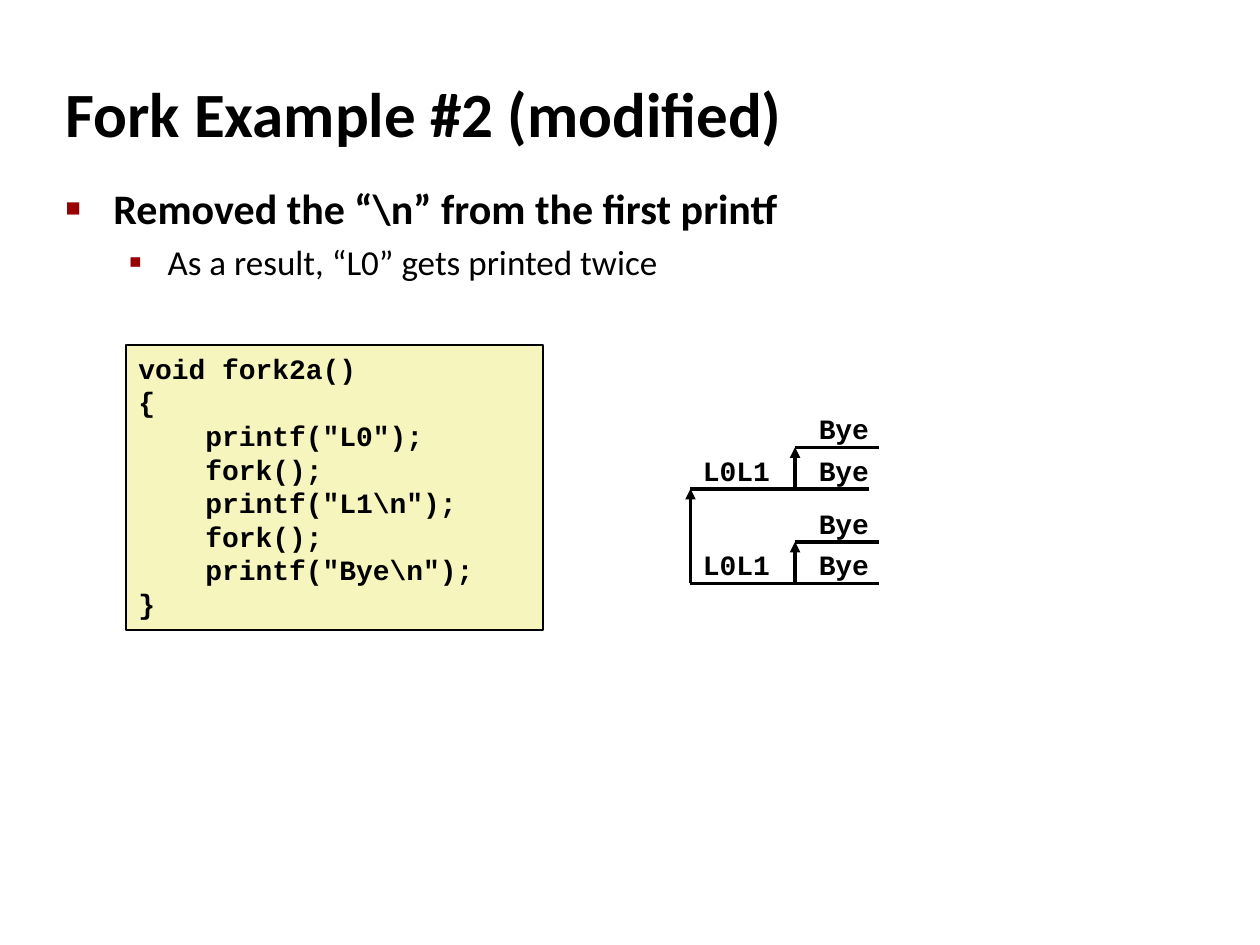
from pptx import Presentation
from pptx.dml.color import RGBColor as Rgb
from pptx.enum.shapes import MSO_CONNECTOR as Conn, MSO_SHAPE as Kind
from pptx.enum.text import MSO_ANCHOR as Anchor, MSO_AUTO_SIZE as Fit, PP_ALIGN as Align
from pptx.oxml import parse_xml
from pptx.oxml.ns import nsdecls
from pptx.util import Inches, Pt


def tint(code):
    return Rgb.from_string(code)


def node(tag, attrs="", inner=""):
    return parse_xml(f'<a:{tag} {nsdecls("a")} {attrs}>{inner}</a:{tag}>')


class Deck:
    """Style and current slide; lengths are in cells of a 100 x 75 grid."""
    ink, mark, cream = "000000", "990000", "F6F5BD"
    sans, mono = "Calibri", "Courier New"

    def __init__(self):
        self.prs = Presentation()
        self.prs.slide_width, self.prs.slide_height = Inches(10), Inches(7.5)
        self.cell = self.prs.slide_width / 100
        self.slide = self.prs.slides.add_slide(self.prs.slide_layouts[1])

    def grid(self, *cells):
        return [round(c * self.cell) for c in cells]

    def place(self, shape, *box):
        shape.left, shape.top, shape.width, shape.height = self.grid(*box)

    def run(self, para, text, size, font, bold=True):
        para.alignment = Align.LEFT
        run = para.add_run()
        run.text = text
        run.font.size, run.font.name, run.font.bold = Pt(size), font, bold
        run.font.color.rgb = tint(self.ink)

    def indent(self, para, left, hang):
        props = para._p.get_or_add_pPr()
        props.set("marL", str(Inches(left)))
        props.set("indent", str(-Inches(hang)))
        return props

    def title(self, text, *box):
        shape = self.slide.shapes.title
        self.place(shape, *box)
        frame = shape.text_frame
        frame.vertical_anchor, frame.auto_size = Anchor.MIDDLE, Fit.NONE
        para = frame.paragraphs[0]
        self.run(para, text, 36, self.sans)
        self.indent(para, 0.13, 0.13)

    def body(self, items, *box):
        shape = self.slide.placeholders[1]
        self.place(shape, *box)
        frame = shape.text_frame
        frame.auto_size = Fit.NONE
        for i, (text, size, bold, left, hang, sign, pct) in enumerate(items):
            para = frame.add_paragraph() if i else frame.paragraphs[0]
            para.level = i
            self.run(para, text, size, self.sans, bold)
            props = self.indent(para, left, hang)
            props.append(node("spcBef", inner='<a:spcPct val="20000"/>'))
            props.append(node("buClr", inner=f'<a:srgbClr val="{self.mark}"/>'))
            props.append(node("buSzPct", f'val="{pct}000"'))
            props.append(node("buFont", 'typeface="Arial"'))
            props.append(node("buChar", f'char="{sign}"'))

    def code(self, lines, *box):
        shape = self.slide.shapes.add_shape(Kind.RECTANGLE, *self.grid(*box))
        shape.shadow.inherit = False
        shape.fill.solid()
        shape.fill.fore_color.rgb = tint(self.cream)
        shape.line.color.rgb, shape.line.width = tint(self.ink), Pt(1)
        frame = shape.text_frame
        frame.vertical_anchor, frame.word_wrap = Anchor.TOP, True
        for i, text in enumerate(lines):
            para = frame.add_paragraph() if i else frame.paragraphs[0]
            self.run(para, text, 16, self.mono)

    def label(self, text, x, y, wide):
        shape = self.slide.shapes.add_textbox(*self.grid(x, y, wide, 3.7))
        shape.text_frame.word_wrap = False
        self.run(shape.text_frame.paragraphs[0], text, 16, self.mono)

    def line(self, x1, y1, x2, y2, arrow=False):
        ends = self.grid(x1, y1, x2, y2)
        line = self.slide.shapes.add_connector(Conn.STRAIGHT, *ends)
        line.line.color.rgb, line.line.width = tint(self.ink), Pt(2)
        if arrow:
            line.line._get_or_add_ln().append(node("tailEnd", 'type="triangle"'))
        line._element.spPr.append(node("effectLst"))


def main():
    deck = Deck()

    # Heading and bullets
    deck.title("Fork Example #2 (modified)", 4.2, 5.8, 71.7, 6.3)
    deck.body([
        ("Removed the “\\n” from the first printf", 24, True, 0.38, 0.38, "■", 60),
        ("As a result, “L0” gets printed twice", 20, False, 0.81, 0.31, "▪", 110),
    ], 4.2, 14, 86.4, 13.5)

    # Code listing
    deck.code([
        "void fork2a()",
        "{",
        '    printf("L0");',
        "    fork();",
        '    printf("L1\\n");',
        "    fork();",
        '    printf("Bye\\n");',
        "}",
    ], 10, 27.4, 33.1, 22.6)

    # Process graph: each process forks one branch above itself
    root, fork, end = 54.8, 63.1, 69.8
    parent, child, rise = 46.3, 38.8, 3.3
    deck.line(root, parent, root, child, arrow=True)
    for y, stop in ((parent, end), (child, 69)):
        deck.line(root, y, fork, y)
        deck.line(fork, y, stop, y)
        deck.line(fork, y, fork, y - rise, arrow=True)
        deck.line(fork, y - rise, end, y - rise)
        deck.label("L0L1", root, y - rise, 7.4)
        for base in (y, y - rise):
            deck.label("Bye", 64, base - rise, 6)

    deck.prs.save("out.pptx")


if __name__ == "__main__":
    main()
